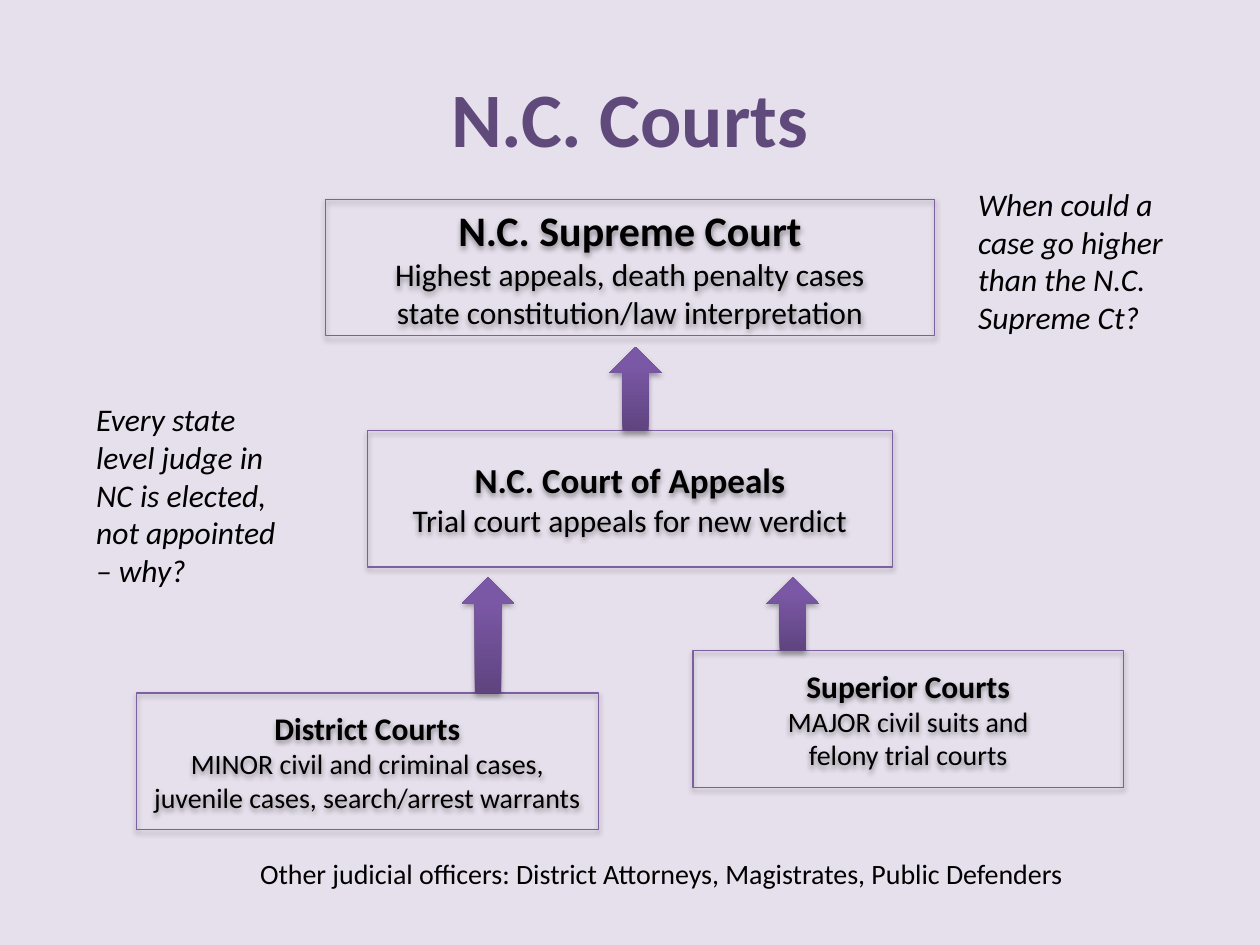
"""Build a slide showing the hierarchy of the N.C. courts."""
from copy import deepcopy
from dataclasses import dataclass

from lxml.etree import SubElement
from pptx import Presentation
from pptx.dml.color import RGBColor
from pptx.enum.shapes import MSO_SHAPE
from pptx.enum.text import MSO_ANCHOR, MSO_AUTO_SIZE, PP_ALIGN
from pptx.oxml.ns import qn
from pptx.shapes.autoshape import Shape
from pptx.slide import Slide
from pptx.text.text import TextFrame
from pptx.util import Cm, Pt


@dataclass(frozen=True)
class Theme:
    font: str = "Calibri"
    background: str = "E6E0EC"
    title: str = "604A7B"
    text: str = "000000"
    border: str = "7D60A0"
    shadow: str = "000000"
    arrow: tuple = ((0, "5F4480"), (0.8, "7B58A6"), (1, "7C57A8"))
    title_size: int = 44
    top_size: int = 24
    middle_size: int = 20
    body_size: int = 18
    small_size: int = 16


@dataclass(frozen=True)
class Court:
    name: str
    lines: tuple[str, ...]
    left: float
    top: float
    width: float
    name_size: int
    line_size: int
    arrow_left: float | None = None
    arrow_tip: float = 0


@dataclass(frozen=True)
class Label:
    text: str
    left: float
    top: float
    width: float
    height: float
    size: int
    color: str
    bold: bool = False
    italic: bool = False
    align: PP_ALIGN = PP_ALIGN.LEFT
    anchor: MSO_ANCHOR = MSO_ANCHOR.TOP


THEME = Theme()
COURT_HEIGHT = 2.75
ARROW_WIDTH = 1.06

COURTS = (
    Court("N.C. Supreme Court",
          ("Highest appeals, death penalty cases", "state constitution/law interpretation"),
          6.56, 4.02, 12.28, THEME.top_size, THEME.body_size),
    Court("N.C. Court of Appeals", ("Trial court appeals for new verdict",),
          7.41, 8.68, 10.58, THEME.middle_size, THEME.body_size, 12.28, 6.99),
    Court("Superior Courts", ("MAJOR civil suits and\vfelony trial courts",),
          13.97, 13.12, 8.68, THEME.body_size, THEME.small_size, 15.45, 11.64),
    Court("District Courts",
          ("MINOR civil and criminal cases, juvenile cases, search/arrest warrants",),
          2.75, 13.97, 9.31, THEME.body_size, THEME.small_size, 9.31, 11.64),
)

LABELS = (
    Label("N.C. Courts", 1.27, 0.76, 22.86, 3.18, THEME.title_size, THEME.title,
          bold=True, align=PP_ALIGN.CENTER, anchor=MSO_ANCHOR.MIDDLE),
    Label("When could a case go higher than the N.C. Supreme Ct?",
          19.47, 3.6, 4.45, 3.33, THEME.body_size, THEME.text, italic=True),
    Label("Every state level judge in NC is elected, not appointed – why?",
          1.69, 7.94, 4.23, 4.11, THEME.body_size, THEME.text, italic=True),
    Label("Other judicial officers: District Attorneys, Magistrates, Public Defenders",
          3.6, 17.15, 19.47, 0.94, THEME.small_size, THEME.text, align=PP_ALIGN.CENTER),
)


def add_text(tf: TextFrame, text: str, size: int, color: str, align: PP_ALIGN,
             bold: bool = False, italic: bool = False) -> None:
    p = tf.paragraphs[0] if not tf.text else tf.add_paragraph()
    p.alignment = align
    for i, part in enumerate(text.split("\v")):
        if i:
            p.add_line_break()
        r = p.add_run()
        r.text = part
        r.font.name = THEME.font
        r.font.size = Pt(size)
        r.font.bold = bold
        r.font.italic = italic
        r.font.color.rgb = RGBColor.from_string(color)


def set_shadow(sp: Shape, opacity: int, distance: float) -> None:
    sp.shadow.inherit = False
    effects = sp._element.spPr.find(qn("a:effectLst"))
    shadow = SubElement(effects, qn("a:outerShdw"), blurRad=str(Pt(3.15)),
                        dist=str(Pt(distance)), dir="5400000", rotWithShape="0")
    color = SubElement(shadow, qn("a:srgbClr"), val=THEME.shadow)
    SubElement(color, qn("a:alpha"), val=str(opacity * 1000))


def add_court(s: Slide, court: Court) -> None:
    sp = s.shapes.add_shape(MSO_SHAPE.RECTANGLE, Cm(court.left), Cm(court.top),
                            Cm(court.width), Cm(COURT_HEIGHT))
    sp.fill.background()
    sp.line.color.rgb = RGBColor.from_string(THEME.border)
    sp.line.width = Pt(0.75)
    set_shadow(sp, 38, 1.6)
    tf = sp.text_frame
    tf.word_wrap = True
    tf.vertical_anchor = MSO_ANCHOR.MIDDLE
    add_text(tf, court.name, court.name_size, THEME.text, PP_ALIGN.CENTER, bold=True)
    for line in court.lines:
        add_text(tf, line, court.line_size, THEME.text, PP_ALIGN.CENTER)


def add_arrow(s: Slide, court: Court) -> None:
    sp = s.shapes.add_shape(MSO_SHAPE.UP_ARROW, Cm(court.arrow_left), Cm(court.arrow_tip),
                            Cm(ARROW_WIDTH), Cm(court.top - court.arrow_tip))
    sp.fill.gradient()
    sp.fill.gradient_angle = 90
    stops = sp._element.spPr.find(qn("a:gradFill")).find(qn("a:gsLst"))
    stops.append(deepcopy(stops[-1]))
    for stop, (position, color) in zip(sp.fill.gradient_stops, THEME.arrow):
        stop.position = position
        stop.color.rgb = RGBColor.from_string(color)
    sp.line.fill.background()
    set_shadow(sp, 35, 1.8)


def add_label(s: Slide, label: Label) -> None:
    sp = s.shapes.add_textbox(Cm(label.left), Cm(label.top), Cm(label.width), Cm(label.height))
    tf = sp.text_frame
    tf.word_wrap = True
    tf.auto_size = MSO_AUTO_SIZE.NONE
    tf.vertical_anchor = label.anchor
    add_text(tf, label.text, label.size, label.color, label.align, label.bold, label.italic)


def main() -> None:
    prs = Presentation()
    prs.slide_width, prs.slide_height = Cm(25.4), Cm(19.05)
    s = prs.slides.add_slide(prs.slide_layouts[6])
    s.background.fill.solid()
    s.background.fill.fore_color.rgb = RGBColor.from_string(THEME.background)
    for court in COURTS:
        add_court(s, court)
    for court in COURTS:
        if court.arrow_left is not None:
            add_arrow(s, court)
    for label in LABELS:
        add_label(s, label)
    prs.save("out.pptx")


if __name__ == "__main__":
    main()
